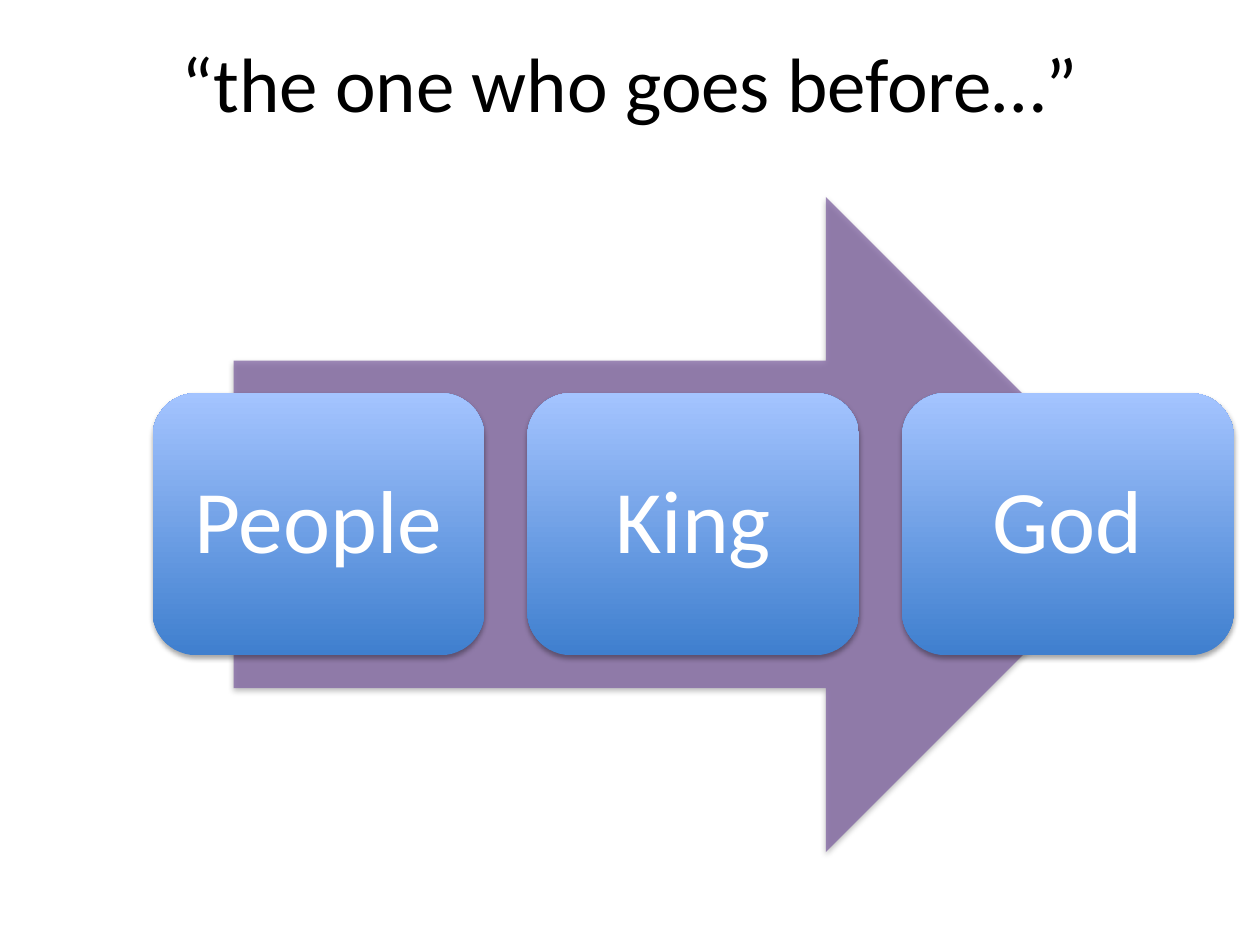
from lxml.etree import SubElement
from pptx import Presentation
from pptx.dml.color import RGBColor
from pptx.enum.shapes import MSO_SHAPE
from pptx.enum.text import MSO_ANCHOR, PP_ALIGN
from pptx.oxml.ns import qn
from pptx.util import Pt


def color(code):
    """Turn a hex string into a colour."""
    return RGBColor.from_string(code)


def write(shape, text, size=44, ink="000000", font="Calibri", inset=7.2, space=1.0):
    """Put centred, formatted text in a shape."""
    frame = shape.text_frame
    frame.word_wrap = True
    frame.vertical_anchor = MSO_ANCHOR.MIDDLE
    frame.margin_left = frame.margin_right = Pt(inset)
    frame.margin_top = frame.margin_bottom = Pt(inset / 2)
    para = frame.paragraphs[0]
    para.alignment = PP_ALIGN.CENTER
    para.line_spacing = space
    run = para.add_run()
    run.text = text
    run.font.size = Pt(size)
    run.font.name = font
    run.font.color.rgb = color(ink)


def fade(node, code, share):
    """Add a colour with the given opacity percent to an XML node."""
    tint = SubElement(node, qn("a:srgbClr"), val=code)
    SubElement(tint, qn("a:alpha"), val=str(share * 1000))


def shade(shape):
    """Give a shape a soft shadow below it."""
    shape.shadow.inherit = False
    effect = shape._element.spPr.find(qn("a:effectLst"))
    drop = SubElement(effect, qn("a:outerShdw"), blurRad=str(Pt(3.1)),
                      dist=str(Pt(1.8)), dir="5400000", rotWithShape="0")
    fade(drop, "000000", 35)


def add_form(slide, kind, left, top, width, height):
    """Add a shape with no outline and a soft shadow."""
    shape = slide.shapes.add_shape(kind, Pt(left), Pt(top), Pt(width), Pt(height))
    shape.line.fill.background()
    shade(shape)
    return shape


def add_arrow(slide):
    """Add the wide arrow behind the cards."""
    arrow = add_form(slide, MSO_SHAPE.RIGHT_ARROW, 133.5, 112.5, 525.6, 374.4)
    arrow.fill.solid()
    arrow.fill.fore_color.rgb = color("8064A2")
    tint = arrow._element.spPr.find(qn("a:solidFill"))[0]
    SubElement(tint, qn("a:alpha"), val="75000")


def add_card(slide, text, left):
    """Add a rounded card with a blue gradient."""
    card = add_form(slide, MSO_SHAPE.ROUNDED_RECTANGLE, left, 224.6, 189.6, 149.8)
    card.fill.gradient()
    card.fill.gradient_angle = 90
    for stop, code in zip(card.fill.gradient_stops, ("3F7FCE", "A4C4FF")):
        stop.color.rgb = color(code)
    write(card, text, size=51, ink="FFFFFF", inset=15, space=0.9)


def add_title(slide, text):
    """Place and fill the title."""
    title = slide.shapes.title
    title.left, title.top = Pt(36), Pt(1.5)
    title.width, title.height = Pt(648), Pt(90)
    write(title, text)


def main():
    """Build and save the slide."""
    deck = Presentation()
    deck.slide_width, deck.slide_height = Pt(720), Pt(540)
    slide = deck.slides.add_slide(deck.slide_layouts[5])
    add_title(slide, "“the one who goes before…”")
    add_arrow(slide)
    for step, name in enumerate(("People", "King", "God")):
        add_card(slide, name, 87.2 + step * 214.1)
    deck.save("out.pptx")


if __name__ == "__main__":
    main()
